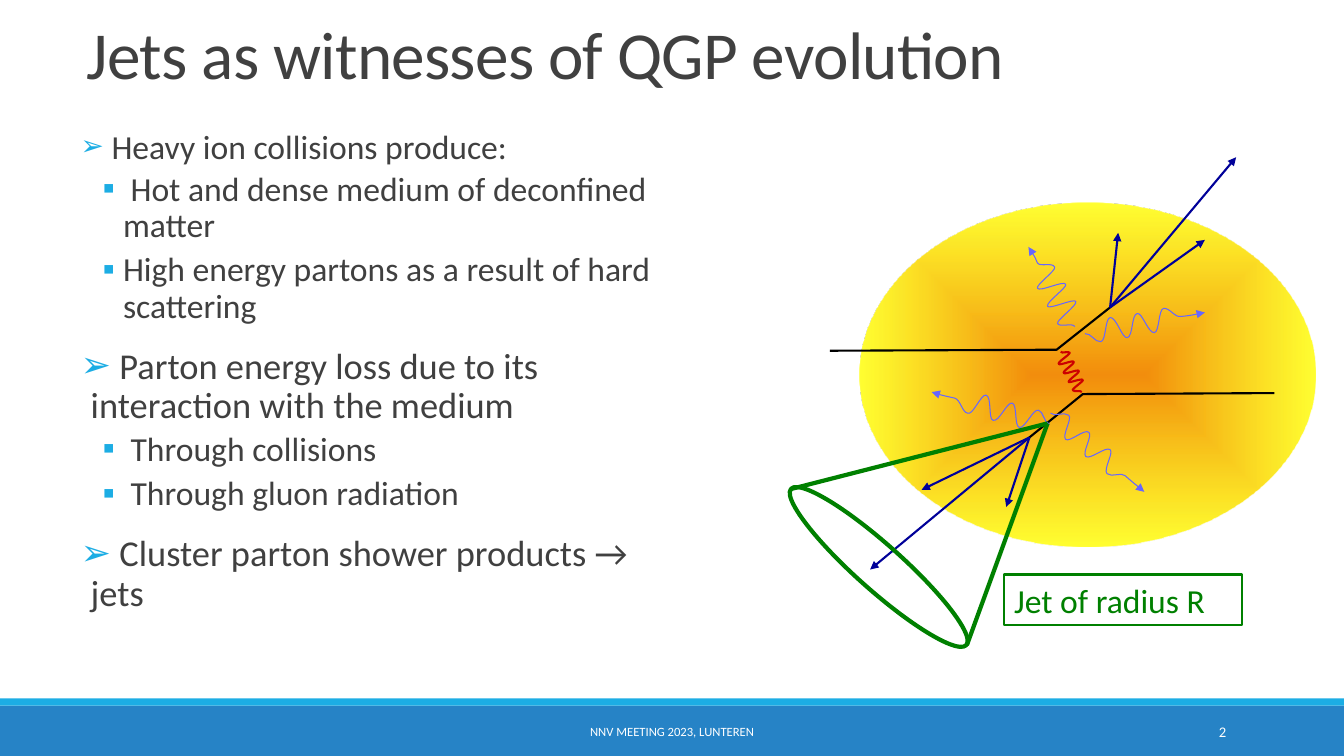
import dataclasses
import math
import lxml.etree
import pptx
import pptx.dml.color
import pptx.enum.shapes
import pptx.enum.text
import pptx.oxml.ns
import pptx.shapes.autoshape
import pptx.shapes.base
import pptx.slide
import pptx.text.text
import pptx.util

RGBColor = pptx.dml.color.RGBColor
Align = pptx.enum.text.PP_ALIGN
Anchor = pptx.enum.text.MSO_ANCHOR
Kind = pptx.enum.shapes.MSO_SHAPE
Slide = pptx.slide.Slide
Shape = pptx.shapes.autoshape.Shape
Point = tuple[int, int]
Box = tuple[int, int, int, int]

SCALE = 9144
FONT = "Calibri"
BLUE = RGBColor(0x26, 0x83, 0xC6)
CYAN = RGBColor(0x1C, 0xAD, 0xE4)
GRAY = RGBColor(0x40, 0x40, 0x40)
WHITE = RGBColor(0xFF, 0xFF, 0xFF)
BLACK = RGBColor(0x00, 0x00, 0x00)
NAVY = RGBColor(0x00, 0x00, 0x99)
RED = RGBColor(0xCC, 0x00, 0x00)
LILAC = RGBColor(0x66, 0x66, 0xFF)
GREEN = RGBColor(0x00, 0x80, 0x00)
ORANGE = RGBColor(0xF2, 0x8D, 0x0D)
YELLOW = RGBColor(0xFF, 0xFF, 0x00)


@dataclasses.dataclass
class Item:
    text: str
    size: int
    level: int = 0
    mark: int = 100


@dataclasses.dataclass
class Label:
    text: str
    box: Box
    size: float
    color: RGBColor
    align: Align
    anchor: Anchor


@dataclasses.dataclass
class Fan:
    hub: Point
    tips: list[Point]
    color: RGBColor
    width: float
    arrow: bool = False


@dataclasses.dataclass
class Gluon:
    start: Point
    end: Point
    height: int
    peaks: int = 6
    color: RGBColor = LILAC
    width: float = 0.75
    arrow: bool = True


ITEMS = [
    Item(" Heavy ion collisions produce:", 24, mark=83),
    Item(" Hot and dense medium of deconfined matter", 24, 1),
    Item("High energy partons as a result of hard scattering", 24, 1),
    Item(" Parton energy loss due to its interaction with the medium", 26),
    Item(" Through collisions", 24, 1),
    Item(" Through gluon radiation", 24, 1),
    Item(" Cluster parton shower products → jets", 26),
]
LABELS = [
    Label("NNV MEETING 2023, LUNTEREN", (403, 706, 527, 40), 9, WHITE, Align.CENTER, Anchor.MIDDLE),
    Label("2", (1083, 706, 143, 40), 10.5, WHITE, Align.RIGHT, Anchor.MIDDLE),
]
JET = Label("Jet of radius R", (996, 570, 236, 50), 24, GREEN, Align.LEFT, Anchor.TOP)
UPPER, LOWER = (1101, 305), (1021, 434)
PARTONS = [
    [(823, 348), (1048, 347), UPPER],
    [(1264, 390), (1074, 391), LOWER],
]
SHOWER = [
    Fan(UPPER, [(1226, 156), (1195, 238), (1109, 231)], NAVY, 1.5, True),
    Fan(LOWER, [(863, 565), (914, 486), (998, 503)], NAVY, 1.5, True),
]
CONE = Fan((1039, 420), [(959, 640), (785, 485)], GREEN, 3)
GLUONS = [
    Gluon((1073, 389), (1052, 349), -7, 8, RED, 1.5, False),
    Gluon((1066, 324), (1020, 245), -13),
    Gluon((1041, 421), (924, 389), 11),
    Gluon((1042, 410), (1135, 488), -10),
    Gluon((1076, 331), (1195, 310), 11),
]


def px(*sides: int) -> list[int]:
    return [side * SCALE for side in sides]


def add(parent: lxml.etree._Element, tag: str, **attrs: str) -> lxml.etree._Element:
    return lxml.etree.SubElement(parent, pptx.oxml.ns.qn(tag), attrs)


def style(para: pptx.text.text._Paragraph, size: float, color: RGBColor) -> None:
    for run in para.runs:
        run.font.size = pptx.util.Pt(size)
        run.font.name = FONT
        run.font.color.rgb = color


def stroke(shape: pptx.shapes.base.BaseShape, color: RGBColor, width: float, arrow: bool = False) -> None:
    shape.line.color.rgb = color
    shape.line.width = pptx.util.Pt(width)
    if arrow:
        add(shape.element.spPr.find(pptx.oxml.ns.qn("a:ln")), "a:tailEnd", type="triangle")


def place(shape: pptx.shapes.base.BaseShape, box: Box) -> None:
    shape.left, shape.top, shape.width, shape.height = px(*box)


def draw_shape(slide: Slide, kind: Kind, box: Box) -> Shape:
    shape = slide.shapes.add_shape(kind, *px(*box))
    shape.shadow.inherit = False
    shape.line.fill.background()
    return shape


def draw_fan(slide: Slide, fan: Fan) -> None:
    for tip in fan.tips:
        link = slide.shapes.add_connector(
            pptx.enum.shapes.MSO_CONNECTOR.STRAIGHT, *px(*fan.hub, *tip))
        stroke(link, fan.color, fan.width, fan.arrow)
        add(link.element.spPr, "a:effectLst")


def draw_trace(slide: Slide, points: list[Point]) -> Shape:
    pen = slide.shapes.build_freeform(*points[0], scale=SCALE)
    pen.add_line_segments(points[1:], close=False)
    shape = pen.convert_to_shape()
    shape.shadow.inherit = False
    shape.fill.background()
    return shape


def wave(gluon: Gluon) -> list[Point]:
    (left, top), (right, base) = gluon.start, gluon.end
    span = math.dist(gluon.start, gluon.end)
    run, rise = (right - left) / span, (base - top) / span
    knots = [(0.0, 0)]
    knots += [(0.12 + 0.11 * k, gluon.height * (-1) ** k) for k in range(gluon.peaks)]
    knots += [(0.8, 0), (1.0, 0)] if gluon.arrow else [(1.0, 0)]
    curve = knots[:1]
    for (here, low), (there, high) in zip(knots, knots[1:]):
        grip = 0.4 * (there - here)
        curve += [(here + grip, low), (there - grip, high), (there, high)]
    return [
        (round(left + run * span * along - rise * off), round(top + rise * span * along + run * off))
        for along, off in curve
    ]


def draw_gluon(slide: Slide, gluon: Gluon) -> None:
    shape = draw_trace(slide, wave(gluon))
    stroke(shape, gluon.color, gluon.width, gluon.arrow)
    steps = list(shape.element.iter(pptx.oxml.ns.qn("a:lnTo")))
    for start in range(0, len(steps), 3):
        bend = add(steps[start].getparent(), "a:cubicBezTo")
        for step in steps[start:start + 3]:
            bend.append(step[0])
            step.getparent().remove(step)


def draw_label(slide: Slide, label: Label) -> Shape:
    shape = slide.shapes.add_textbox(*px(*label.box))
    frame = shape.text_frame
    frame.word_wrap = True
    frame.vertical_anchor = label.anchor
    frame.text = label.text
    frame.paragraphs[0].alignment = label.align
    style(frame.paragraphs[0], label.size, label.color)
    return shape


def fill_title(slide: Slide) -> None:
    title = slide.shapes.title
    place(title, (76, 4, 1100, 93))
    frame = title.text_frame
    frame.text = "Jets as witnesses of QGP evolution"
    frame.auto_size = pptx.enum.text.MSO_AUTO_SIZE.NONE
    frame.vertical_anchor = Anchor.BOTTOM
    para = frame.paragraphs[0]
    para.alignment = Align.LEFT
    para.line_spacing = 0.85
    style(para, 48, GRAY)
    para.runs[0].font._element.set("spc", "-50")


def fill_list(slide: Slide) -> None:
    body = slide.placeholders[1]
    place(body, (80, 124, 579, 500))
    frame = body.text_frame
    frame.text = "\n".join(item.text for item in ITEMS)
    frame.auto_size = pptx.enum.text.MSO_AUTO_SIZE.NONE
    frame.vertical_anchor = Anchor.TOP
    frame.margin_left = frame.margin_right = 0
    for para, item in zip(frame.paragraphs, ITEMS):
        para.level = item.level
        para.line_spacing = 0.9
        before, after, left, hang, mark = [(12, 2, 10, 10, "➢"), (2, 4, 42, 20, "▪")][item.level]
        para.space_before = pptx.util.Pt(before)
        para.space_after = pptx.util.Pt(after)
        style(para, item.size, GRAY)
        props = para._p.get_or_add_pPr()
        props.set("marL", str(left * SCALE))
        props.set("indent", str(-hang * SCALE))
        add(add(props, "a:buClr"), "a:srgbClr", val=str(CYAN))
        add(props, "a:buSzPct", val=str(item.mark * 1000))
        add(props, "a:buFont", typeface=FONT)
        add(props, "a:buChar", char=mark)


def draw_plasma(slide: Slide) -> None:
    plasma = draw_shape(slide, Kind.OVAL, (853, 201, 452, 341))
    plasma.fill.gradient()
    for stop, color in zip(plasma.fill.gradient_stops, (ORANGE, YELLOW)):
        stop.color.rgb = color
    grad = plasma.element.spPr.find(pptx.oxml.ns.qn("a:gradFill"))
    add(grad[0][1][0], "a:alpha", val="80000")
    grad.remove(grad.find(pptx.oxml.ns.qn("a:lin")))
    focus = add(grad, "a:path", path="shape")
    add(focus, "a:fillToRect", **dict.fromkeys("ltrb", "50000"))


def main() -> None:
    deck = pptx.Presentation()
    deck.slide_width, deck.slide_height = px(1333, 750)
    slide = deck.slides.add_slide(deck.slide_layouts[1])
    for top, height, color in [(700, 50, BLUE), (693, 7, CYAN)]:
        band = draw_shape(slide, Kind.RECTANGLE, (0, top, 1333, height))
        band.fill.solid()
        band.fill.fore_color.rgb = color
    fill_title(slide)
    fill_list(slide)
    draw_plasma(slide)
    for points in PARTONS:
        stroke(draw_trace(slide, points), BLACK, 1.5)
    for fan in SHOWER:
        draw_fan(slide, fan)
    for gluon in GLUONS:
        draw_gluon(slide, gluon)
    rim = draw_shape(slide, Kind.OVAL, (755, 540, 233, 45))
    rim.rotation = 41.7
    rim.fill.background()
    stroke(rim, GREEN, 3)
    draw_fan(slide, CONE)
    stroke(draw_label(slide, JET), GREEN, 1.5)
    for label in LABELS:
        draw_label(slide, label)
    deck.save("out.pptx")


if __name__ == "__main__":
    main()
